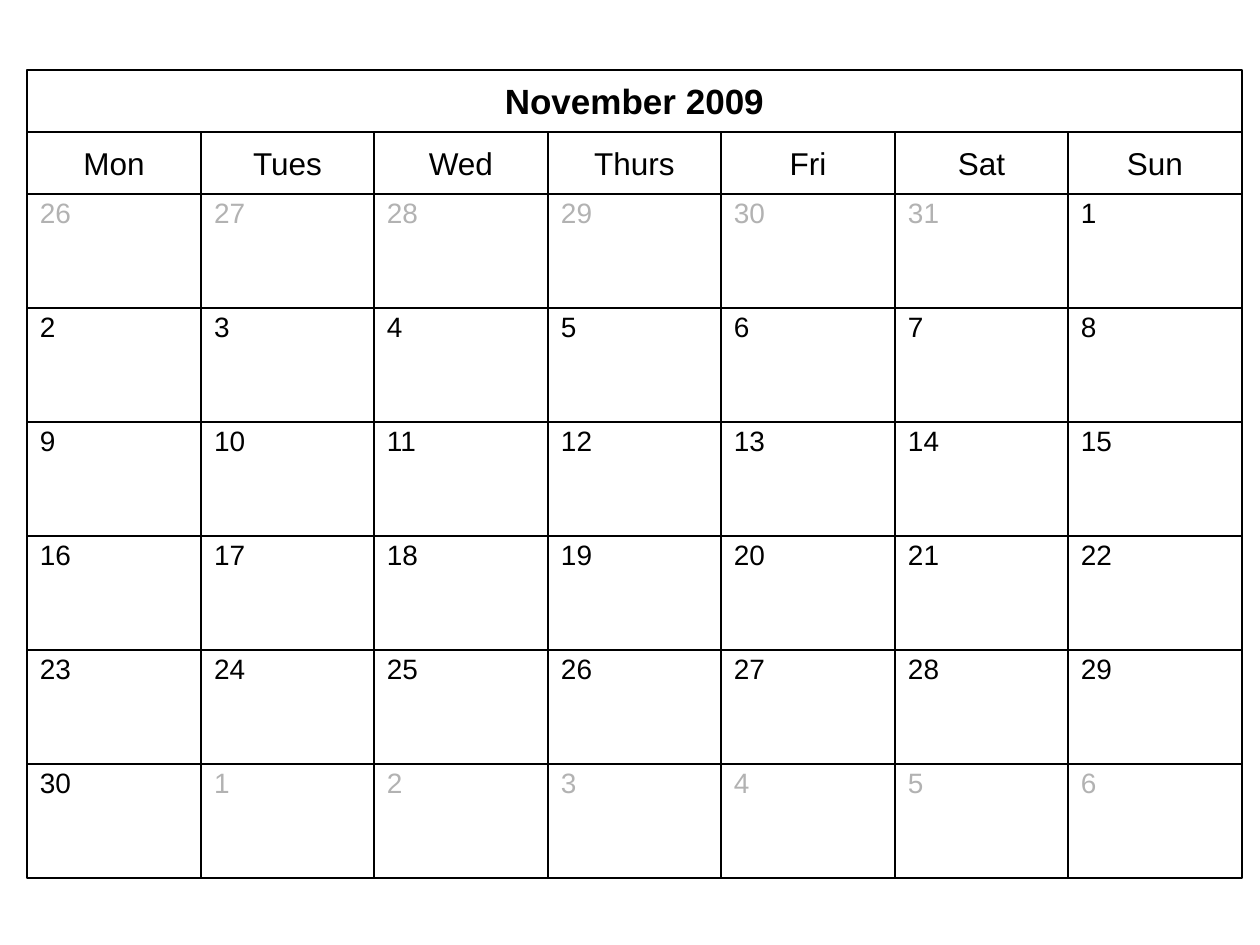
from itertools import accumulate
from pptx import Presentation
from pptx.dml.color import RGBColor
from pptx.enum.shapes import MSO_SHAPE
from pptx.enum.text import MSO_ANCHOR, MSO_AUTO_SIZE, PP_ALIGN
from pptx.util import Pt

TITLE = "November 2009"
DAYS = ["Mon", "Tues", "Wed", "Thurs", "Fri", "Sat", "Sun"]
DATES = [
    *[(day, "faded") for day in range(26, 32)],
    *[(day, "ink") for day in range(1, 31)],
    *[(day, "faded") for day in range(1, 7)],
]
COLORS = {"paper": "FFFFFF", "ink": "000000", "faded": "B2B2B2"}

PX = 914400 // 126
LEFT, WIDTH, COLS = 27, 1215, len(DAYS)
HEIGHTS = [62, 62] + [114] * (len(DATES) // COLS)
TOPS = list(accumulate(HEIGHTS, initial=70))
EDGES = [LEFT + round(WIDTH * col / COLS) for col in range(COLS + 1)]


def color(name):
    return RGBColor.from_string(COLORS[name])


def style(box, text, size, tone="ink", head=True):
    box.fill.solid()
    box.fill.fore_color.rgb = color("paper")
    box.line.color.rgb = color("ink")
    box.line.width = Pt(1)
    frame = box.text_frame
    frame.word_wrap = True
    frame.auto_size = MSO_AUTO_SIZE.NONE
    frame.margin_left = frame.margin_right = 13 * PX
    frame.margin_top = frame.margin_bottom = 2 * PX
    frame.vertical_anchor = MSO_ANCHOR.MIDDLE if head else MSO_ANCHOR.TOP
    frame.text = text
    para = frame.paragraphs[0]
    para.alignment = PP_ALIGN.CENTER if head else PP_ALIGN.LEFT
    para.space_before = Pt(size * 0.2)
    para.font.name = "Arial"
    para.font.size = Pt(size)
    para.font.color.rgb = color(tone)


def cell(slide, row, col, *look):
    box = slide.shapes.add_shape(
        MSO_SHAPE.RECTANGLE, EDGES[col] * PX, TOPS[row] * PX,
        (EDGES[col + 1] - EDGES[col]) * PX, HEIGHTS[row] * PX)
    box.shadow.inherit = False
    style(box, *look)


def main():
    deck = Presentation()
    deck.slide_width, deck.slide_height = 1260 * PX, 945 * PX
    slide = deck.slides.add_slide(deck.slide_layouts[5])

    title = slide.shapes.title
    title.left, title.top = LEFT * PX, TOPS[0] * PX
    title.width, title.height = WIDTH * PX, HEIGHTS[0] * PX
    style(title, TITLE, 20)
    title.text_frame.paragraphs[0].font.bold = True

    for col, day in enumerate(DAYS):
        cell(slide, 1, col, day, 18)
    for spot, (day, tone) in enumerate(DATES):
        week, col = divmod(spot, COLS)
        cell(slide, week + 2, col, str(day), 16, tone, False)

    deck.save("out.pptx")


if __name__ == "__main__":
    main()
